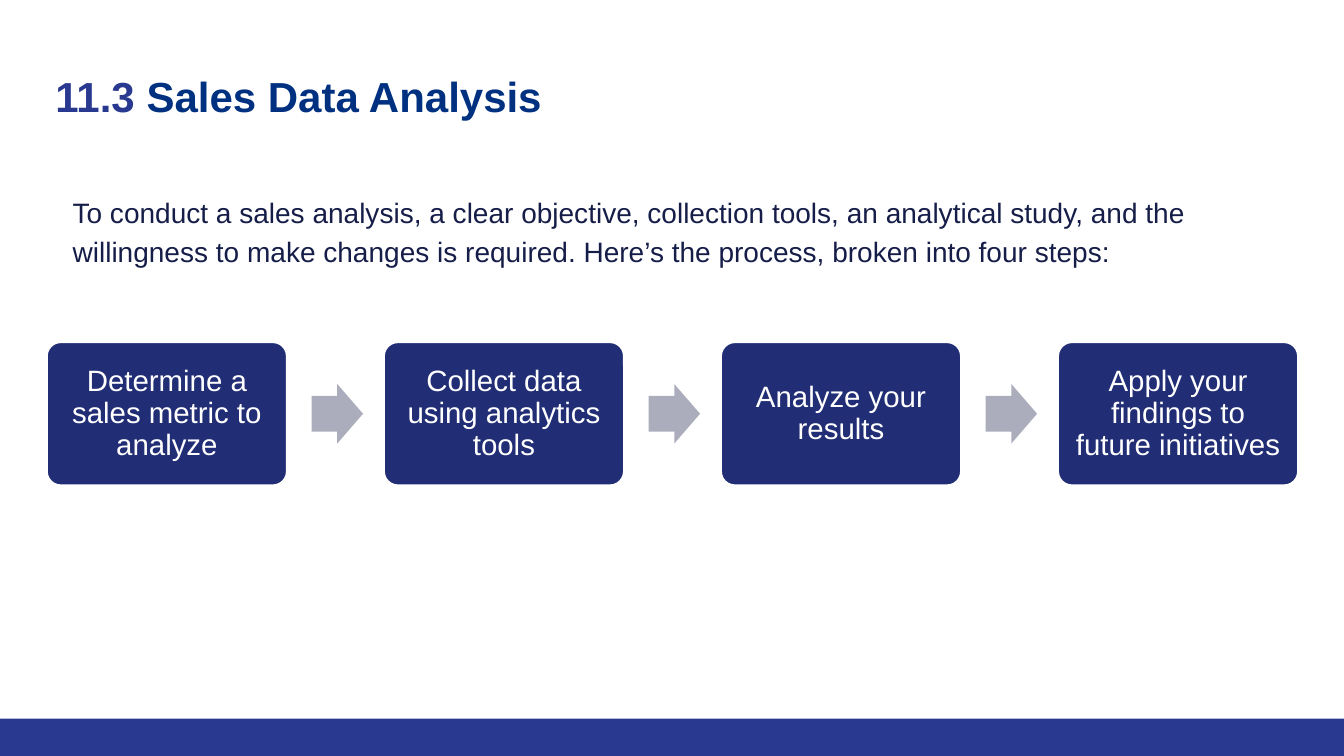
from dataclasses import dataclass

from lxml import etree
from pptx import Presentation
from pptx.dml.color import RGBColor
from pptx.enum.shapes import MSO_SHAPE
from pptx.enum.text import MSO_ANCHOR, MSO_AUTO_SIZE, PP_ALIGN
from pptx.oxml.ns import qn
from pptx.util import Inches, Pt

LEFT, CENTER = PP_ALIGN.LEFT, PP_ALIGN.CENTER
TOP, MIDDLE = MSO_ANCHOR.TOP, MSO_ANCHOR.MIDDLE
NO_AUTOFIT = MSO_AUTO_SIZE.NONE
RECTANGLE = MSO_SHAPE.RECTANGLE
ROUNDED = MSO_SHAPE.ROUNDED_RECTANGLE
RIGHT_ARROW = MSO_SHAPE.RIGHT_ARROW


@dataclass(frozen=True)
class Theme:
    font: str = "Arial"
    band: str = "2A3990"
    heading: str = "003180"
    body: str = "151D48"
    step: str = "212D74"
    arrow: str = "ACADBC"
    white: str = "FFFFFF"
    title_size: int = 30
    body_size: int = 20
    step_size: int = 21


theme = Theme()


def write(holder, runs, size, align, anchor, inset, spacing, bold=False):
    frame = holder.text_frame
    frame.word_wrap = True
    frame.auto_size = NO_AUTOFIT
    frame.vertical_anchor = anchor
    frame.margin_left = frame.margin_right = Inches(inset)
    frame.margin_top = frame.margin_bottom = Inches(inset)
    paragraph = frame.paragraphs[0]
    paragraph.alignment = align
    paragraph.line_spacing = spacing
    paragraph.space_before = Pt(0)
    for text, color in runs:
        run = paragraph.add_run()
        run.text = text
        run.font.name = theme.font
        run.font.size = Pt(size)
        run.font.bold = bold
        run.font.color.rgb = RGBColor.from_string(color)
    return paragraph


def add_block(kind, left, top, width, height, color):
    block = slide.shapes.add_shape(
        kind, Inches(left), Inches(top), Inches(width), Inches(height))
    block.shadow.inherit = False
    block.fill.solid()
    block.fill.fore_color.rgb = RGBColor.from_string(color)
    block.line.fill.background()
    return block


deck = Presentation()
deck.slide_width = Inches(13.33)
deck.slide_height = Inches(7.5)
slide = deck.slides.add_slide(deck.slide_layouts[1])

add_block(RECTANGLE, 0, 7.13, 13.33, 0.37, theme.band)

heading = slide.shapes.title
heading.left, heading.top = Inches(0.45), Inches(0.6)
heading.width, heading.height = Inches(12.42), Inches(0.89)
write(heading, [("11.3 ", theme.band), ("Sales Data Analysis", theme.heading)],
      theme.title_size, LEFT, TOP, 0.1, 1.0, bold=True)

introduction = slide.placeholders[1]
introduction.left, introduction.top = Inches(0.45), Inches(1.79)
introduction.width, introduction.height = Inches(12.42), Inches(1.13)
opening = write(
    introduction,
    [("To conduct a sales analysis, a clear objective, collection tools, "
      "an analytical study, and the willingness to make changes is required. "
      "Here’s the process, broken into four steps:", theme.body)],
    theme.body_size, LEFT, TOP, 0.1, 1.15)
opening_format = opening._p.get_or_add_pPr()
opening_format.set("marL", str(Inches(0.17)))
opening_format.set("indent", "0")
etree.SubElement(opening_format, qn("a:buNone"))

steps = [
    "Determine a sales metric to analyze",
    "Collect data using analytics tools",
    "Analyze your results",
    "Apply your findings to future initiatives",
]
first_left, pitch = 0.46, 3.343
step_top, step_width, step_height = 3.39, 2.39, 1.43
arrow_offset, arrow_width, arrow_height = 2.63, 0.51, 0.59
arrow_top = step_top + (step_height - arrow_height) / 2

for index, step in enumerate(steps):
    left = first_left + index * pitch
    card = add_block(ROUNDED, left, step_top, step_width, step_height, theme.step)
    card.adjustments[0] = 0.1
    card.line.color.rgb = RGBColor.from_string(theme.white)
    card.line.width = Pt(2)
    write(card, [(step, theme.white)], theme.step_size, CENTER, MIDDLE, 0.09, 0.9)
    if index < len(steps) - 1:
        arrow = add_block(RIGHT_ARROW, left + arrow_offset, arrow_top,
                          arrow_width, arrow_height, theme.arrow)
        arrow.adjustments[0] = 0.6
        arrow.adjustments[1] = 0.5

deck.save("out.pptx")
